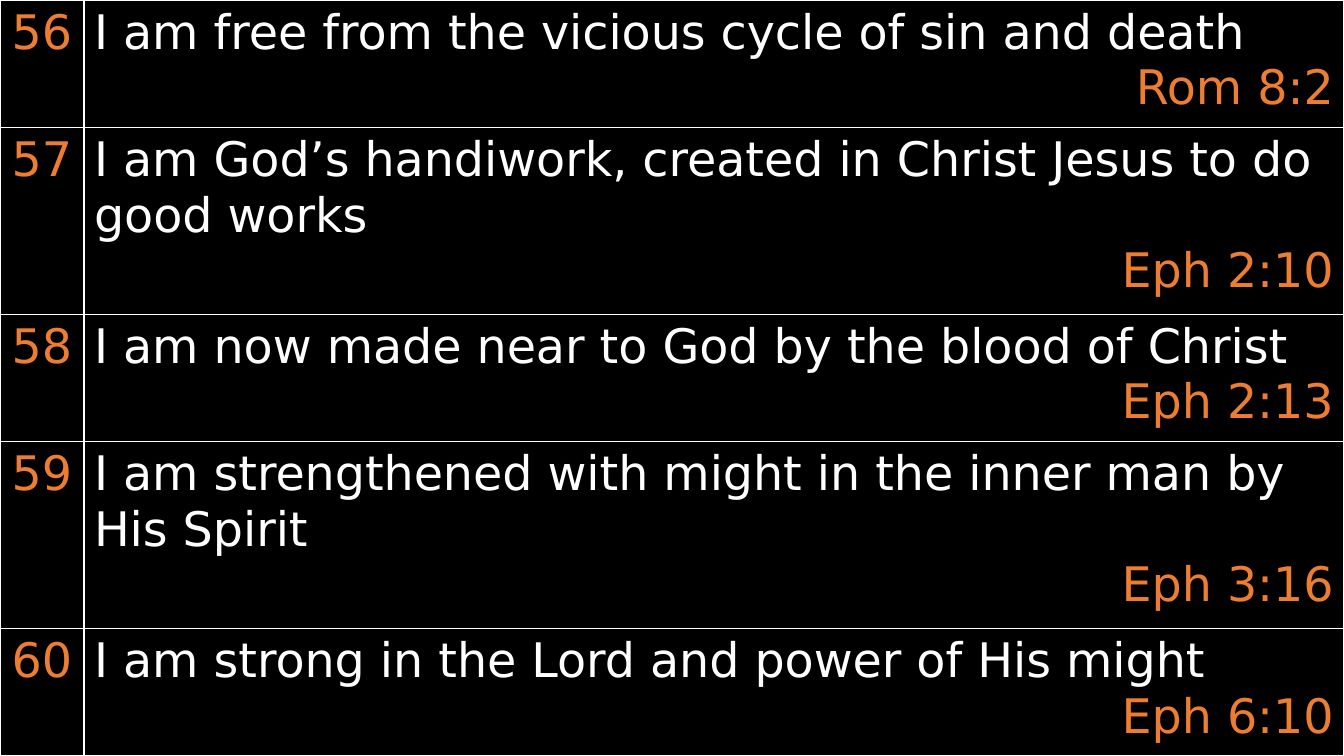
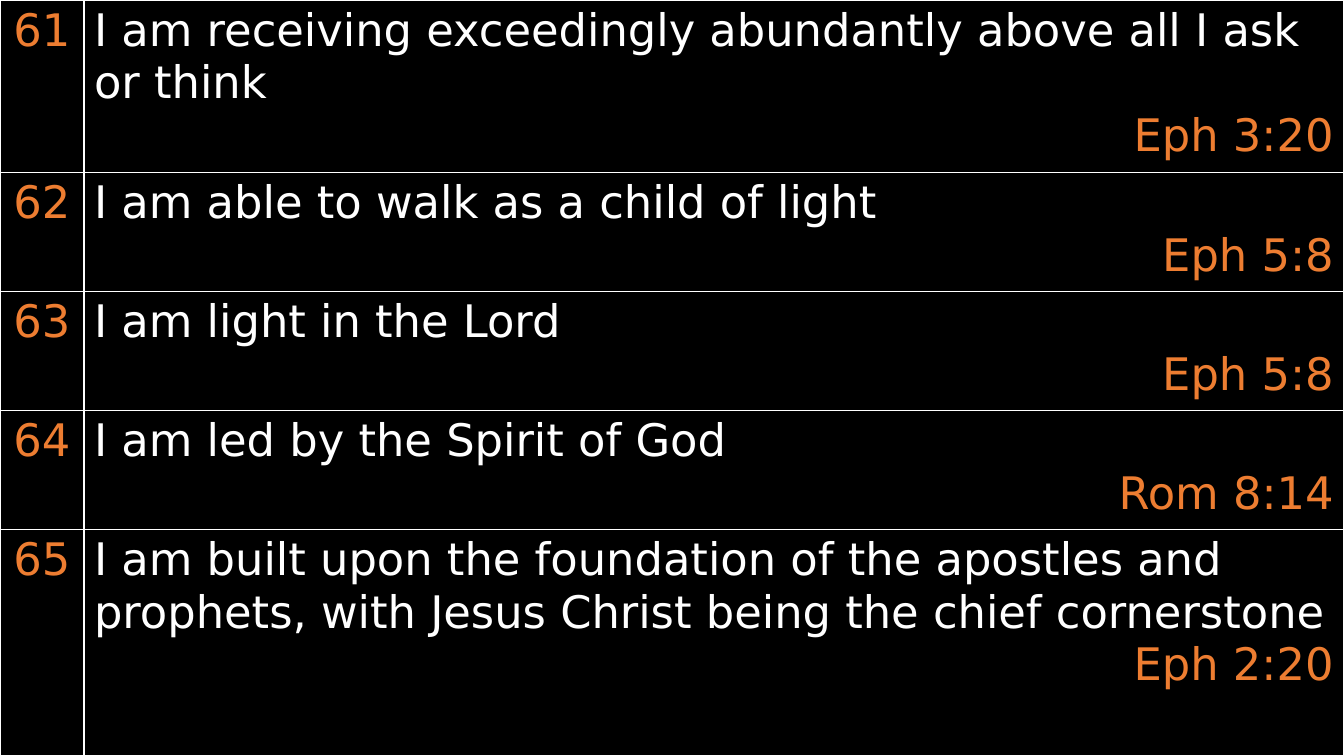
from lxml.etree import SubElement
from pptx import Presentation
from pptx.dml.color import RGBColor
from pptx.enum.text import PP_ALIGN
from pptx.oxml.ns import qn
from pptx.util import Pt

BLACK = RGBColor(0x00, 0x00, 0x00)
WHITE = RGBColor(0xFF, 0xFF, 0xFF)
ORANGE = RGBColor(0xED, 0x7D, 0x31)
FONT = "DejaVu Sans"
WIDTH, HEIGHT = 960, 540
NUMBER_WIDTH = 60

# Each slide: first number, font size, rows of (height, statement, verse)
SLIDES = [
    (56, 34, [
        (91, "I am free from the vicious cycle of sin and death", "Rom 8:2"),
        (133.5, "I am God’s handiwork, created in Christ Jesus to do good works", "Eph 2:10"),
        (91, "I am now made near to God by the blood of Christ", "Eph 2:13"),
        (133.5, "I am strengthened with might in the inner man by His Spirit", "Eph 3:16"),
        (91, "I am strong in the Lord and power of His might", "Eph 6:10"),
    ]),
    (61, 32, [
        (123, "I am receiving exceedingly abundantly above all I ask or think", "Eph 3:20"),
        (85, "I am able to walk as a child of light", "Eph 5:8"),
        (85, "I am light in the Lord", "Eph 5:8"),
        (85, "I am led by the Spirit of God", "Rom 8:14"),
        (162, "I am built upon the foundation of the apostles and prophets, "
              "with Jesus Christ being the chief cornerstone", "Eph 2:20"),
    ]),
]


def style_cell(cell):
    """Give the cell a thin white border on every side and a black fill."""
    tc_pr = cell._tc.get_or_add_tcPr()
    for side in ("a:lnL", "a:lnR", "a:lnT", "a:lnB"):
        ln = SubElement(tc_pr, qn(side), w=str(Pt(1)))
        SubElement(SubElement(ln, qn("a:solidFill")), qn("a:srgbClr"), val=str(WHITE))
    cell.fill.solid()
    cell.fill.fore_color.rgb = BLACK


def write(p, text, size, color, align):
    p.text = text
    p.alignment = align
    p.font.name = FONT
    p.font.size = Pt(size)
    p.font.color.rgb = color


prs = Presentation()
prs.slide_width, prs.slide_height = Pt(WIDTH), Pt(HEIGHT)

for first, size, rows in SLIDES:
    s = prs.slides.add_slide(prs.slide_layouts[6])
    s.background.fill.solid()
    s.background.fill.fore_color.rgb = BLACK

    table = s.shapes.add_table(len(rows), 2, 0, 0, Pt(WIDTH), Pt(HEIGHT)).table
    table.first_row = table.horz_banding = False
    table.columns[0].width = Pt(NUMBER_WIDTH)
    table.columns[1].width = Pt(WIDTH - NUMBER_WIDTH)

    for i, (height, statement, verse) in enumerate(rows):
        table.rows[i].height = Pt(height)
        number_cell, text_cell = table.cell(i, 0), table.cell(i, 1)
        style_cell(number_cell)
        style_cell(text_cell)
        write(number_cell.text_frame.paragraphs[0], str(first + i), size, ORANGE, PP_ALIGN.CENTER)
        tf = text_cell.text_frame
        write(tf.paragraphs[0], statement, size, WHITE, PP_ALIGN.LEFT)
        write(tf.add_paragraph(), verse, size, ORANGE, PP_ALIGN.RIGHT)

prs.save("out.pptx")
